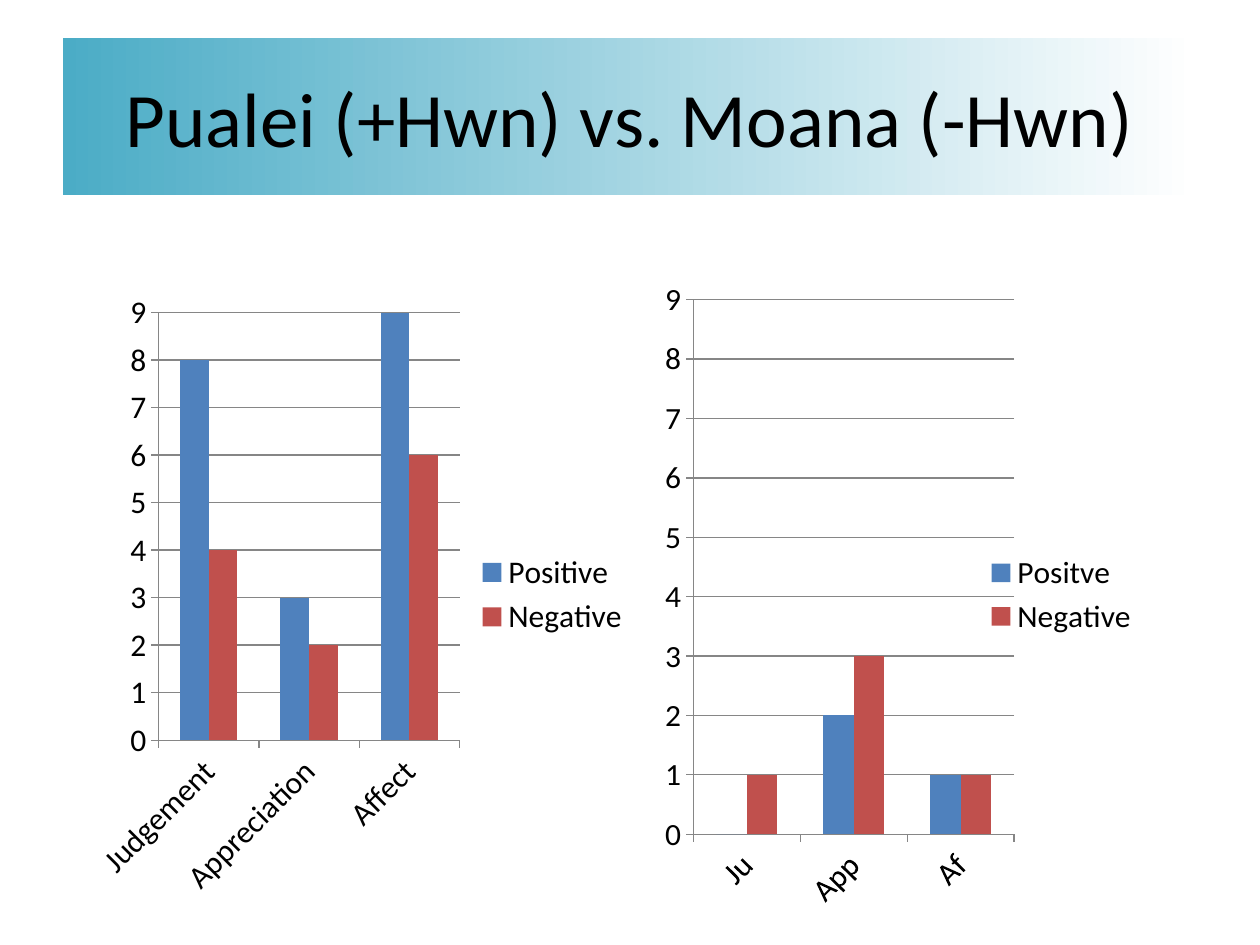
import pptx
import pptx.chart.data
import pptx.dml.color
import pptx.enum.chart
import pptx.enum.shapes
import pptx.enum.text
import pptx.oxml
import pptx.oxml.ns
import pptx.util
from dataclasses import dataclass

Inches = pptx.util.Inches


def rgb(value):
    return pptx.dml.color.RGBColor.from_string(value)


@dataclass(frozen=True)
class Theme:
    font: str = "Calibri"
    text: str = "000000"
    banner_start: str = "4BACC6"
    banner_end: str = "FFFFFF"
    axis: str = "868686"
    series: tuple = ("4F81BD", "C0504D")
    title_size: int = 44
    chart_size: int = 18


class SlideBuilder:
    def __init__(self, slide, theme):
        self.slide = slide
        self.theme = theme

    def style_font(self, font, size):
        font.name = self.theme.font
        font.size = pptx.util.Pt(size)
        font.color.rgb = rgb(self.theme.text)

    def banner(self, text, left, top, width, height):
        shape = self.slide.shapes.add_shape(
            pptx.enum.shapes.MSO_SHAPE.RECTANGLE,
            Inches(left), Inches(top), Inches(width), Inches(height))
        shape.shadow.inherit = False
        shape.line.fill.background()
        shape.fill.gradient()
        shape.fill.gradient_angle = 0
        colors = (self.theme.banner_start, self.theme.banner_end)
        for position, (stop, color) in enumerate(zip(shape.fill.gradient_stops, colors)):
            stop.position = position
            stop.color.rgb = rgb(color)
        frame = shape.text_frame
        frame.word_wrap = True
        frame.vertical_anchor = pptx.enum.text.MSO_ANCHOR.MIDDLE
        paragraph = frame.paragraphs[0]
        paragraph.text = text
        paragraph.alignment = pptx.enum.text.PP_ALIGN.CENTER
        self.style_font(paragraph.font, self.theme.title_size)

    def column_chart(self, categories, series, left, top, width, height, plot_layout=None):
        data = pptx.chart.data.CategoryChartData()
        data.categories = categories
        for name, values in series.items():
            data.add_series(name, values)
        chart = self.slide.shapes.add_chart(
            pptx.enum.chart.XL_CHART_TYPE.COLUMN_CLUSTERED,
            Inches(left), Inches(top), Inches(width), Inches(height), data).chart
        chart.has_title = False
        self.style_font(chart.font, self.theme.chart_size)
        chart.has_legend = True
        chart.legend.position = pptx.enum.chart.XL_LEGEND_POSITION.RIGHT
        chart.legend.include_in_layout = False

        plot = chart.plots[0]
        plot.vary_by_categories = False
        plot.gap_width = 150
        plot.overlap = 0
        for column, color in zip(plot.series, self.theme.series):
            column.format.fill.solid()
            column.format.fill.fore_color.rgb = rgb(color)

        value_axis = chart.value_axis
        value_axis.minimum_scale = 0
        value_axis.maximum_scale = 9
        value_axis.major_unit = 1
        value_axis.has_major_gridlines = True
        for axis in (chart.category_axis, value_axis):
            axis.major_tick_mark = pptx.enum.chart.XL_TICK_MARK.OUTSIDE
            self.style_font(axis.tick_labels.font, self.theme.chart_size)
        for line in (chart.category_axis.format.line, value_axis.format.line,
                     value_axis.major_gridlines.format.line):
            line.color.rgb = rgb(self.theme.axis)
            line.width = pptx.util.Pt(0.75)
        if plot_layout:
            self.place_plot(chart, plot_layout)

    def place_plot(self, chart, layout):
        """Fix the inner plot area as fractions of the chart: x, y, width, height."""
        fields = "".join(f'<c:{key}Mode val="edge"/>' for key in "xy")
        fields += "".join(f'<c:{key} val="{value}"/>' for key, value in zip("xywh", layout))
        element = pptx.oxml.parse_xml(
            f'<c:layout {pptx.oxml.ns.nsdecls("c")}><c:manualLayout>'
            f'<c:layoutTarget val="inner"/>{fields}</c:manualLayout></c:layout>')
        plot_area = chart.plots[0]._element.getparent()
        for previous in plot_area.findall(pptx.oxml.ns.qn("c:layout")):
            plot_area.remove(previous)
        plot_area.insert(0, element)


def main():
    presentation = pptx.Presentation()
    presentation.slide_width = Inches(10)
    presentation.slide_height = Inches(7.5)
    slide = presentation.slides.add_slide(presentation.slide_layouts[6])
    builder = SlideBuilder(slide, Theme())

    builder.banner("Pualei (+Hwn) vs. Moana (-Hwn)", 0.5, 0.3, 9, 1.25)
    chart_top, chart_height = 2.23, 4.98
    builder.column_chart(
        ("Judgement", "Appreciation", "Affect"),
        {"Positive": (8, 3, 9), "Negative": (4, 2, 6)},
        0.68, chart_top, 4.42, chart_height)
    builder.column_chart(
        ("Judgment", "Appreciation", "Affect"),
        {"Positve": (0, 2, 1), "Negative": (1, 3, 1)},
        5.1, chart_top, 4.04, chart_height, plot_layout=(0.1, 0.02, 0.63, 0.87))
    presentation.save("out.pptx")


if __name__ == "__main__":
    main()
